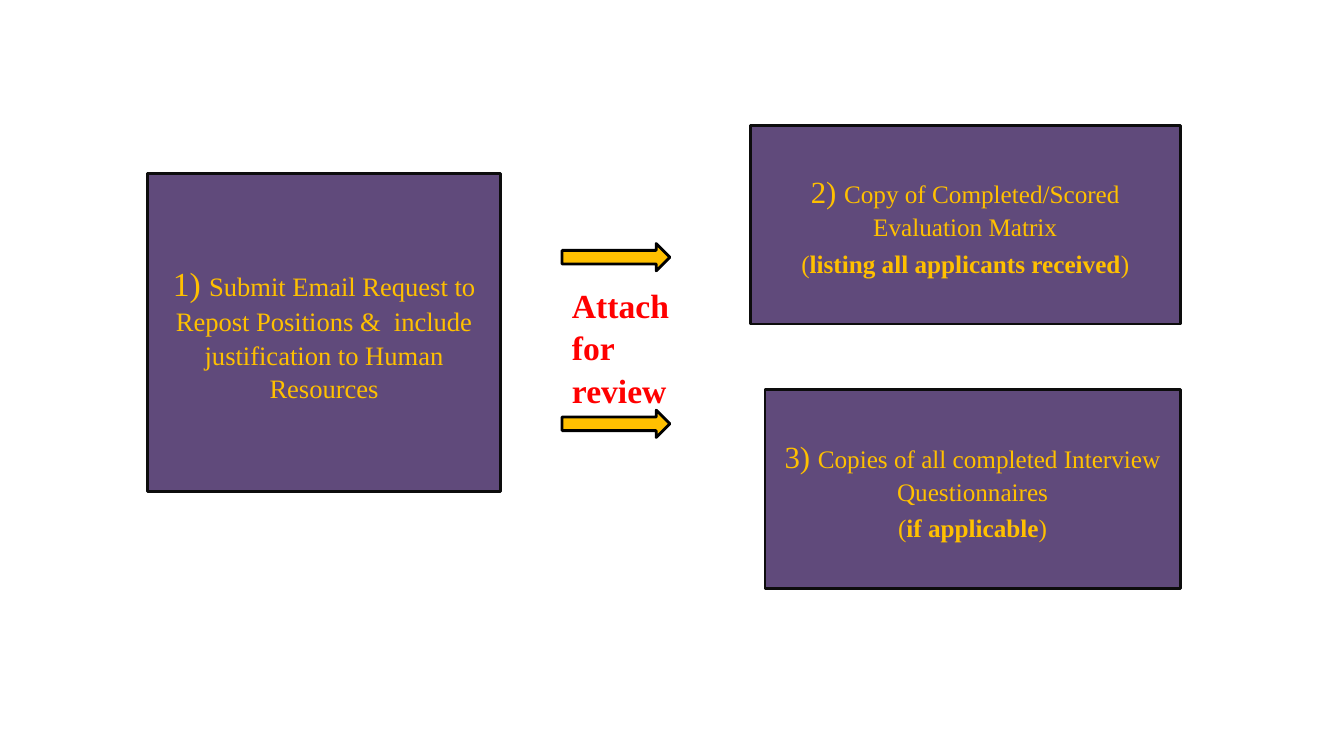
from pptx import Presentation
from pptx.dml.color import RGBColor
from pptx.enum.shapes import MSO_SHAPE
from pptx.enum.text import MSO_ANCHOR, PP_ALIGN
from pptx.util import Pt

PURPLE = RGBColor(0x60, 0x4A, 0x7B)
INK = RGBColor(0x0D, 0x0D, 0x0D)
BLACK = RGBColor(0, 0, 0)
GOLD = RGBColor(0xFF, 0xC0, 0)
RED = RGBColor(0xFF, 0, 0)
FONT = "Times New Roman"

deck = Presentation()
deck.slide_width, deck.slide_height = Pt(960), Pt(540)
slide = deck.slides.add_slide(deck.slide_layouts[6])


def add_shape(kind, box, fill, edge):
    shape = slide.shapes.add_shape(kind, *[Pt(v) for v in box])
    shape.shadow.inherit = False
    shape.fill.solid()
    shape.fill.fore_color.rgb = fill
    shape.line.color.rgb = edge
    shape.line.width = Pt(2)
    return shape


def add_run(para, text, size, bold=False):
    run = para.add_run()
    run.text = text
    run.font.size = Pt(size)
    run.font.bold = bold


# Step boxes: place, number, number size, text, text size, bold note
steps = [
    ((105.5, 124, 252, 227), "1) ", 24,
     "Submit Email Request to Repost Positions &  include "
     "justification to Human Resources", 19, None),
    ((536, 89.5, 307, 142), "2) ", 22,
     "Copy of Completed/Scored Evaluation Matrix", 18,
     "listing all applicants received"),
    ((546.5, 278.5, 296.5, 142), "3) ", 22,
     "Copies of all completed Interview Questionnaires", 18,
     "if applicable"),
]
for box, num, big, text, size, note in steps:
    frame = add_shape(MSO_SHAPE.RECTANGLE, box, PURPLE, INK).text_frame
    frame.word_wrap = True
    frame.vertical_anchor = MSO_ANCHOR.MIDDLE
    para = frame.paragraphs[0]
    add_run(para, num, big)
    add_run(para, text, size)
    if note:
        para = frame.add_paragraph()
        para.space_before = Pt(3.6)
        add_run(para, "(", size)
        add_run(para, note, size, True)
        add_run(para, ")", size)
    for para in frame.paragraphs:
        para.alignment = PP_ALIGN.CENTER
        para.line_spacing = 1.05
        para.font.name = FONT
        para.font.color.rgb = GOLD
        for run in para.runs:
            run.font.name = FONT
            run.font.color.rgb = GOLD

# Arrows
for top in (174, 293):
    add_shape(MSO_SHAPE.RIGHT_ARROW, (401.5, top, 77, 19.5), GOLD, BLACK)

# Label between the arrows
label = slide.shapes.add_textbox(Pt(401.5), Pt(198.5), Pt(116), Pt(94.5))
label.text_frame.word_wrap = True
para = label.text_frame.paragraphs[0]
para.text = "Attach for review"
para.line_spacing = 1.05
para.font.name = FONT
para.font.size = Pt(24)
para.font.bold = True
para.font.color.rgb = RED

deck.save("out.pptx")
